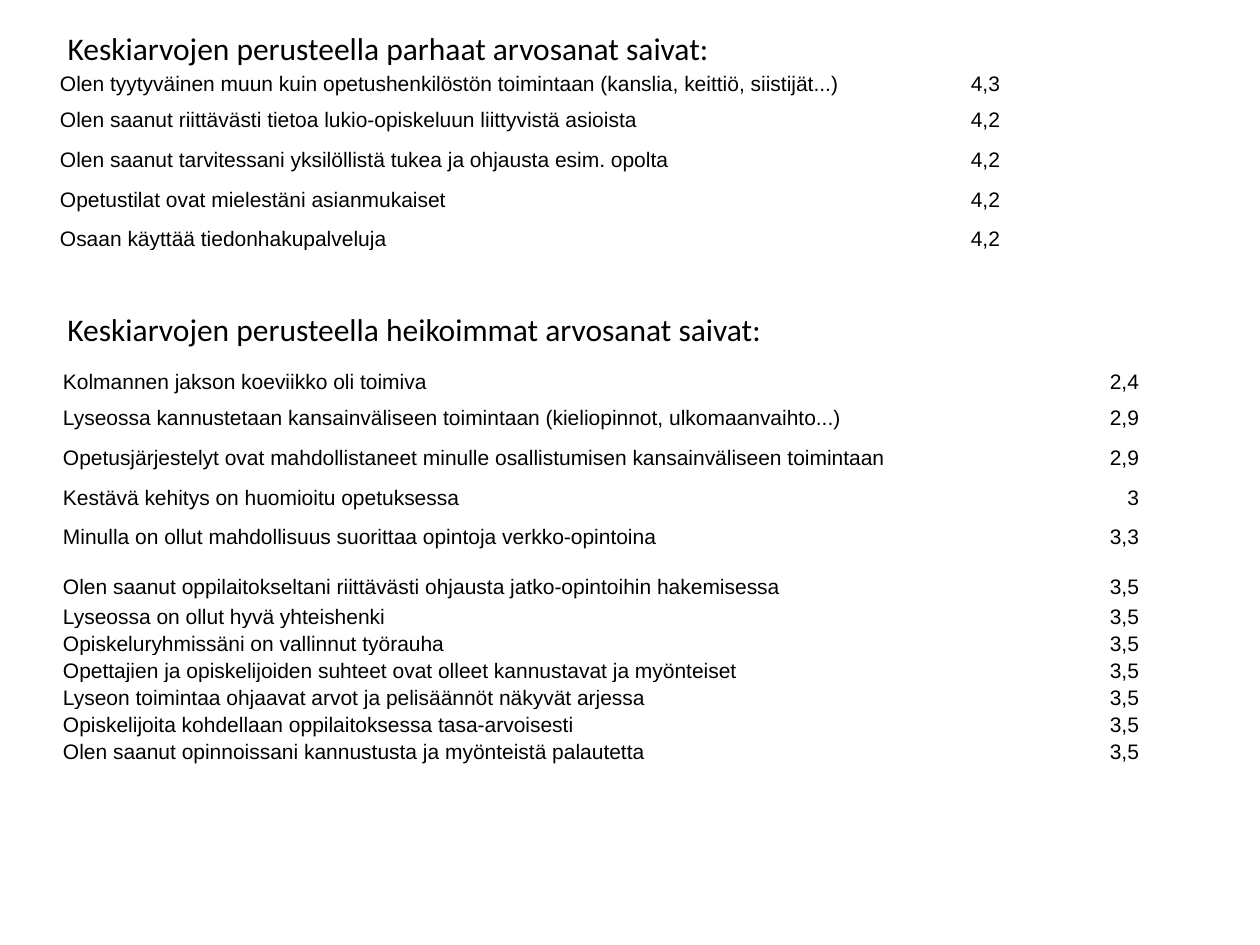
"""Build a slide listing the best and weakest average grades of a school survey."""
from lxml import etree
from pptx import Presentation
from pptx.dml.color import RGBColor
from pptx.enum.text import MSO_ANCHOR, MSO_AUTO_SIZE, PP_ALIGN
from pptx.oxml.ns import qn
from pptx.util import Pt

LEFT, RIGHT = PP_ALIGN.LEFT, PP_ALIGN.RIGHT
TOP, MIDDLE = MSO_ANCHOR.TOP, MSO_ANCHOR.MIDDLE
NO_AUTOFIT = MSO_AUTO_SIZE.NONE
PX = 914400 // 126
COLORS = {"text": "000000", "border": "FFFFFF"}

BEST_HEADING = "Keskiarvojen perusteella parhaat arvosanat saivat:"
WEAKEST_HEADING = "Keskiarvojen perusteella heikoimmat arvosanat saivat:"
BEST = [
    ("Olen tyytyväinen muun kuin opetushenkilöstön toimintaan (kanslia, keittiö, siistijät...)", "4,3"),
    ("Olen saanut riittävästi tietoa lukio-opiskeluun liittyvistä asioista", "4,2"),
    ("Olen saanut tarvitessani yksilöllistä tukea ja ohjausta esim. opolta", "4,2"),
    ("Opetustilat ovat mielestäni asianmukaiset", "4,2"),
    ("Osaan käyttää tiedonhakupalveluja", "4,2"),
]
WEAKEST = [
    ("Kolmannen jakson koeviikko oli toimiva", "2,4"),
    ("Lyseossa kannustetaan kansainväliseen toimintaan (kieliopinnot, ulkomaanvaihto...)", "2,9"),
    ("Opetusjärjestelyt ovat mahdollistaneet minulle osallistumisen kansainväliseen toimintaan", "2,9"),
    ("Kestävä kehitys on huomioitu opetuksessa", "3"),
    ("Minulla on ollut mahdollisuus suorittaa opintoja verkko-opintoina", "3,3"),
    ("Olen saanut oppilaitokseltani riittävästi ohjausta jatko-opintoihin hakemisessa", "3,5"),
    ("Lyseossa on ollut hyvä yhteishenki", "3,5"),
    ("Opiskeluryhmissäni on vallinnut työrauha", "3,5"),
    ("Opettajien ja opiskelijoiden suhteet ovat olleet kannustavat ja myönteiset", "3,5"),
    ("Lyseon toimintaa ohjaavat arvot ja pelisäännöt näkyvät arjessa", "3,5"),
    ("Opiskelijoita kohdellaan oppilaitoksessa tasa-arvoisesti", "3,5"),
    ("Olen saanut opinnoissani kannustusta ja myönteistä palautetta", "3,5"),
]
FIRST_ROWS = [36, 40, 40, 39]
TABLES = [
    (BEST, 54, 69, (833, 119), FIRST_ROWS + [27]),
    (WEAKEST, 57, 367, (952, 136), FIRST_ROWS + [50, 30] + [27] * 6),
]


def format_paragraph(paragraph, font_name, size, alignment=LEFT):
    paragraph.alignment = alignment
    paragraph.font.name = font_name
    paragraph.font.size = Pt(size)
    paragraph.font.color.rgb = RGBColor.from_string(COLORS["text"])


def format_heading(shape, text, box, anchor):
    shape.left, shape.top, shape.width, shape.height = [value * PX for value in box]
    frame = shape.text_frame
    frame.text = text
    frame.auto_size = NO_AUTOFIT
    frame.word_wrap = False
    frame.vertical_anchor = anchor
    format_paragraph(frame.paragraphs[0], "Calibri", 18)


def add_borders(cell, bottom_width):
    properties = cell._tc.get_or_add_tcPr()
    widths = {"a:lnL": 1, "a:lnR": 1, "a:lnT": 1, "a:lnB": bottom_width}
    for index, (tag, width) in enumerate(widths.items()):
        line = etree.Element(qn(tag), w=str(Pt(width)))
        fill = etree.SubElement(line, qn("a:solidFill"))
        etree.SubElement(fill, qn("a:srgbClr"), val=COLORS["border"])
        properties.insert(index, line)


def format_cell(cell, text, alignment, bottom_width):
    cell.margin_left = cell.margin_right = 6 * PX
    cell.margin_top = cell.margin_bottom = 0
    cell.vertical_anchor = TOP
    cell.fill.background()
    add_borders(cell, bottom_width)
    cell.text = text
    paragraph = cell.text_frame.paragraphs[0]
    paragraph.line_spacing = 1.15
    format_paragraph(paragraph, "Arial", 12, alignment)


def add_grade_table(slide, grades, left, top, widths, heights):
    table = slide.shapes.add_table(
        len(grades), len(widths), left * PX, top * PX, sum(widths) * PX, sum(heights) * PX
    ).table
    table.first_row = table.horz_banding = False
    for column, width in zip(table.columns, widths):
        column.width = width * PX
    for row_index, (row, height, grade) in enumerate(zip(table.rows, heights, grades)):
        row.height = height * PX
        bottom_width = 3 if row_index == 0 else 1
        for cell, text, alignment in zip(row.cells, grade, (LEFT, RIGHT)):
            format_cell(cell, text, alignment, bottom_width)


def main():
    presentation = Presentation()
    presentation.slide_width, presentation.slide_height = 1260 * PX, 945 * PX
    slide = presentation.slides.add_slide(presentation.slide_layouts[5])
    for table in TABLES:
        add_grade_table(slide, *table)
    format_heading(slide.shapes.title, BEST_HEADING, (55, 23, 674, 50), MIDDLE)
    weakest_heading = slide.shapes.add_textbox(0, 0, 0, 0)
    format_heading(weakest_heading, WEAKEST_HEADING, (55, 304, 727, 63), TOP)
    presentation.save("out.pptx")


if __name__ == "__main__":
    main()
